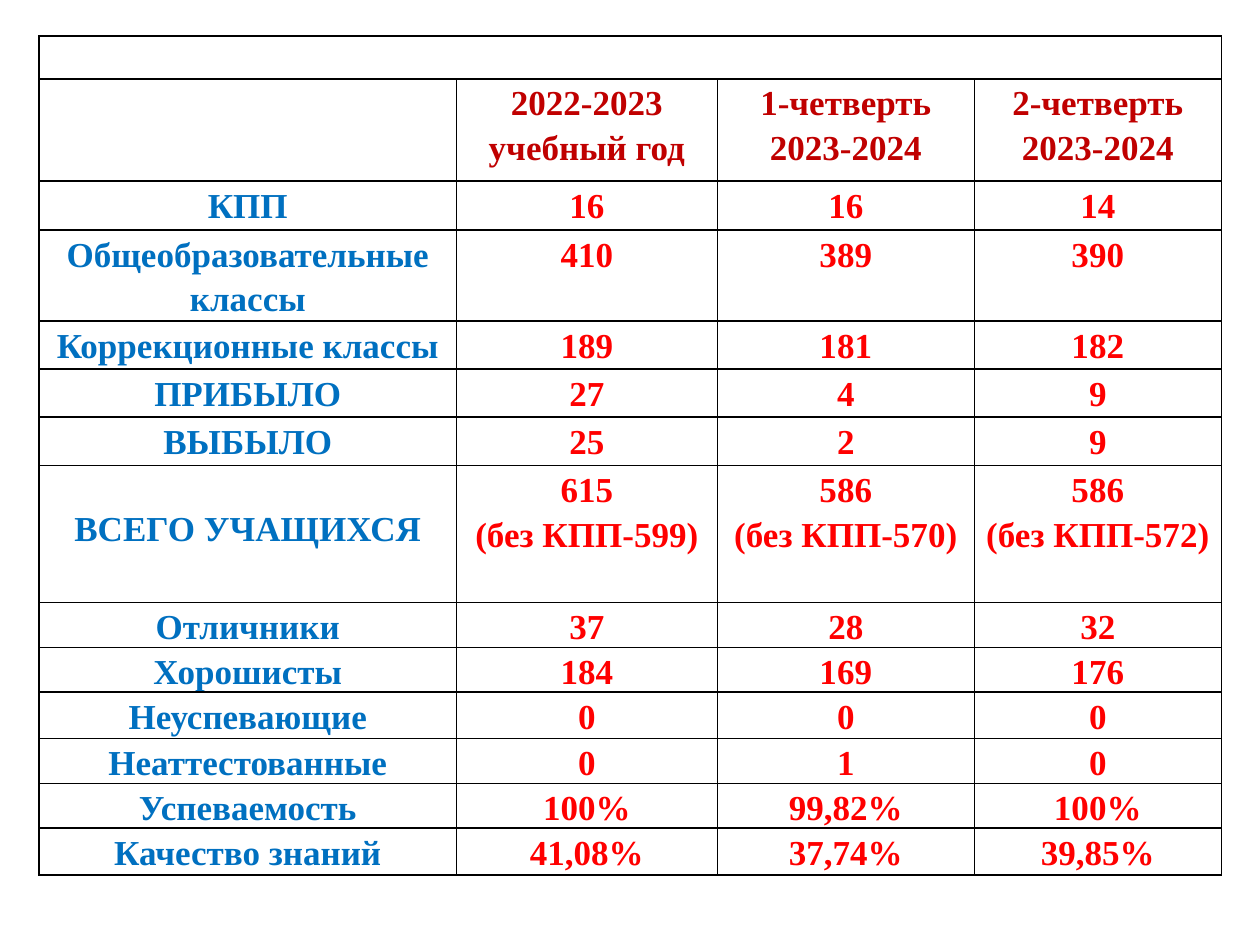
"""Build a slide with a table of pupil numbers and results by term."""
from lxml import etree
from pptx import Presentation
from pptx.dml.color import RGBColor
from pptx.enum.text import PP_ALIGN
from pptx.oxml.ns import qn
from pptx.util import Cm, Pt

CENTER = PP_ALIGN.CENTER
HEADING, LABEL, VALUE, BORDER = "C00000", "0070C0", "FF0000", "000000"
COLUMN_WIDTHS = [8.41, 5.26, 5.18, 4.98]
ROWS = [
    (0.86, ["", "", "", ""]),
    (2.06, ["", "2022-2023 учебный год", "1-четверть 2023-2024", "2-четверть 2023-2024"]),
    (0.99, ["КПП", "16", "16", "14"]),
    (1.83, ["Общеобразовательные классы", "410", "389", "390"]),
    (0.97, ["Коррекционные классы", "189", "181", "182"]),
    (0.97, ["ПРИБЫЛО", "27", "4", "9"]),
    (0.97, ["ВЫБЫЛО", "25", "2", "9"]),
    (2.77, ["ВСЕГО УЧАЩИХСЯ", "615\n(без КПП-599)", "586\n(без КПП-570)", "586\n(без КПП-572)"]),
    (0.86, ["Отличники", "37", "28", "32"]),
    (0.86, ["Хорошисты", "184", "169", "176"]),
    (0.94, ["Неуспевающие", "0", "0", "0"]),
    (0.86, ["Неаттестованные", "0", "1", "0"]),
    (0.86, ["Успеваемость", "100%", "99,82%", "100%"]),
    (0.94, ["Качество знаний", "41,08%", "37,74%", "39,85%"]),
]
TOTAL_ROW = 7


def color(value):
    return RGBColor.from_string(value)


def add_borders(cell):
    properties = cell._tc.get_or_add_tcPr()
    for position, side in enumerate(("a:lnL", "a:lnR", "a:lnT", "a:lnB")):
        line = etree.Element(qn(side), w=str(Pt(1)))
        fill = etree.SubElement(line, qn("a:solidFill"))
        etree.SubElement(fill, qn("a:srgbClr"), val=BORDER)
        properties.insert(position, line)


presentation = Presentation()
presentation.slide_width = Cm(25.4)
presentation.slide_height = Cm(19.05)
slide = presentation.slides.add_slide(presentation.slide_layouts[6])

results = slide.shapes.add_table(
    len(ROWS), len(COLUMN_WIDTHS), Cm(0.79), Cm(0.73),
    Cm(sum(COLUMN_WIDTHS)), Cm(sum(height for height, _ in ROWS))).table
results.first_row = False
results.horz_banding = False
for column, width in zip(results.columns, COLUMN_WIDTHS):
    column.width = Cm(width)

for row_index, (height, entries) in enumerate(ROWS):
    results.rows[row_index].height = Cm(height)
    for column_index, entry in enumerate(entries):
        cell = results.cell(row_index, column_index)
        cell.margin_left = cell.margin_right = Cm(0.18)
        cell.margin_top = cell.margin_bottom = 0
        cell.fill.background()
        add_borders(cell)
        if not entry:
            continue
        cell.text = entry
        if row_index == 1:
            text_color = HEADING
        else:
            text_color = VALUE if column_index else LABEL
        for paragraph in cell.text_frame.paragraphs:
            paragraph.alignment = CENTER
            paragraph.line_spacing = 1.15
            paragraph.font.name = "Times New Roman"
            paragraph.font.size = Pt(20)
            paragraph.font.bold = True
            paragraph.font.color.rgb = color(text_color)

results.cell(0, 0).merge(results.cell(0, len(COLUMN_WIDTHS) - 1))
results.cell(TOTAL_ROW, 0).margin_top = Cm(0.79)

presentation.save("out.pptx")
